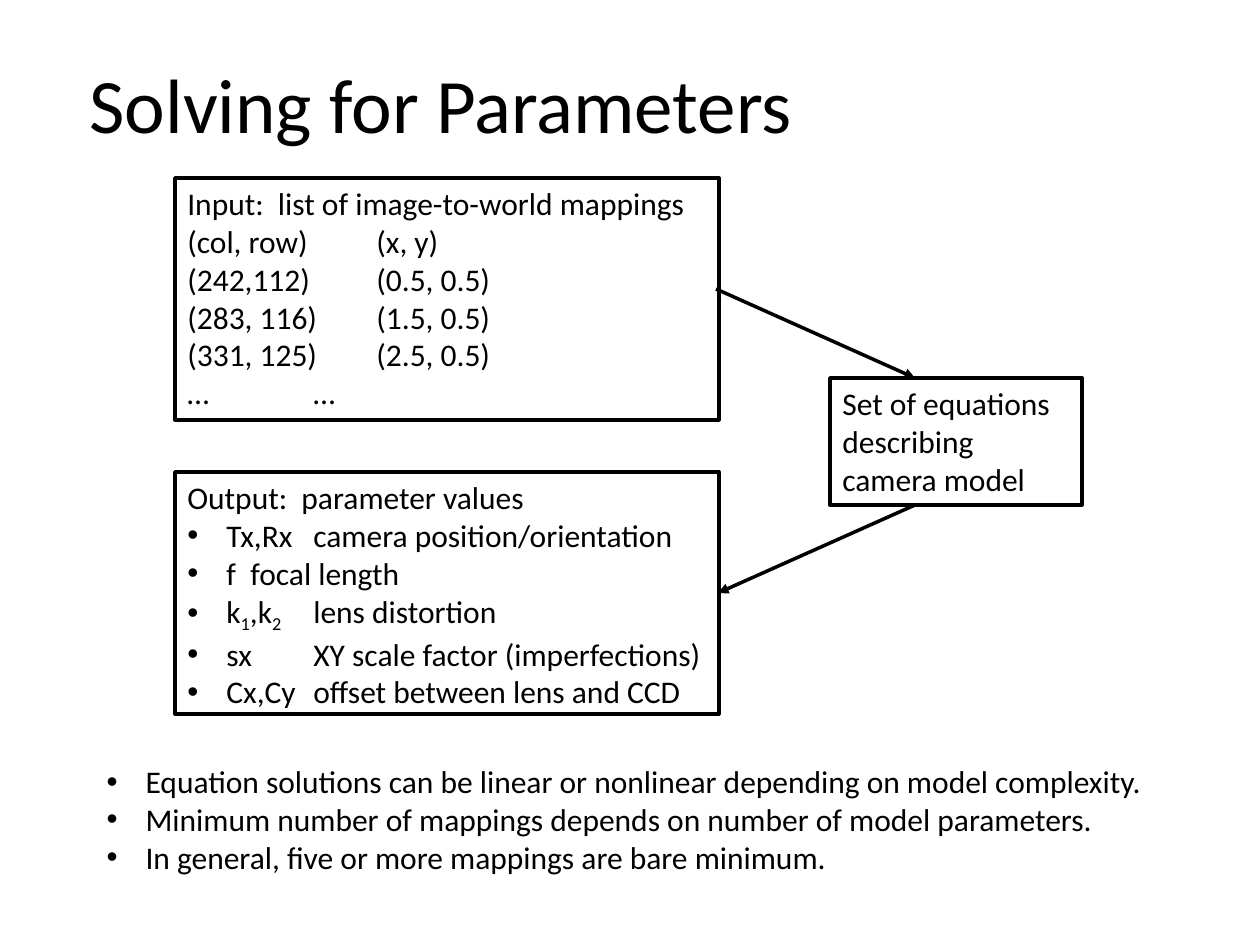
from lxml.etree import SubElement
from pptx import Presentation
from pptx.dml.color import RGBColor
from pptx.enum.shapes import MSO_CONNECTOR as Connector, MSO_SHAPE as Shape
from pptx.enum.text import MSO_ANCHOR as Anchor, MSO_AUTO_SIZE as AutoSize, PP_ALIGN as Align
from pptx.oxml.ns import qn
from pptx.util import Emu, Pt

# Content: a line is a string or a list of (text, is_subscript) runs
TITLE = "Solving for Parameters"
INPUT_LINES = [
    "Input:  list of image-to-world mappings",
    "(col, row)\t\t(x, y)",
    "(242,112) \t(0.5, 0.5)",
    "(283, 116)\t(1.5, 0.5)",
    "(331, 125)\t(2.5, 0.5)",
    "…\t\t…",
]
OUTPUT_HEADING = "Output:  parameter values"
OUTPUT_ITEMS = [
    "Tx,Rx\tcamera position/orientation",
    "f\tfocal length",
    [("k", False), ("1", True), (",k", False), ("2", True), ("\tlens distortion", False)],
    "sx\tXY scale factor (imperfections)",
    "Cx,Cy\toffset between lens and CCD",
]
MODEL_TEXT = "Set of equations describing camera model"
NOTES = [
    "Equation solutions can be linear or nonlinear depending on model complexity.",
    "Minimum number of mappings depends on number of model parameters.",
    "In general, five or more mappings are bare minimum.",
]

# Layout in px: left, top, width, height
TITLE_AREA = (77, 50, 736, 106)
NOTES_AREA = (94, 756, 1075, 127)
INPUT_AREA = (175, 178, 544, 242)
OUTPUT_AREA = (175, 472, 544, 242)
MODEL_AREA = (830, 378, 252, 127)
ARROWS = [((716, 289), (915, 378)), ((915, 505), (718, 593))]
INDENT = 39
FONT, INK = "Calibri", "000000"


def px(value):
    return Emu(round(value * 914400 / 126))


def color(hex_text):
    return RGBColor.from_string(hex_text)


def place(shape, area):
    shape.left, shape.top, shape.width, shape.height = map(px, area)


def add_bullet(paragraph):
    properties = paragraph._p.get_or_add_pPr()
    properties.set("marL", str(px(INDENT)))
    properties.set("indent", str(-px(INDENT)))
    SubElement(properties, qn("a:buFont"), typeface="Arial")
    SubElement(properties, qn("a:buChar"), char="•")


def write(shape, plain=(), bulleted=(), size=18, anchor=Anchor.TOP, wrap=True):
    frame = shape.text_frame
    frame.word_wrap, frame.auto_size, frame.vertical_anchor = wrap, AutoSize.NONE, anchor
    lines = [(line, False) for line in plain] + [(line, True) for line in bulleted]
    for index, (line, has_bullet) in enumerate(lines):
        paragraph = frame.add_paragraph() if index else frame.paragraphs[0]
        paragraph.alignment = Align.LEFT
        paragraph.space_before = Pt(0)
        if has_bullet:
            add_bullet(paragraph)
        for text, is_subscript in [(line, False)] if isinstance(line, str) else line:
            run = paragraph.add_run()
            run.text = text
            run.font.name, run.font.size = FONT, Pt(size)
            run.font.color.rgb = color(INK)
            if is_subscript:
                run._r.get_or_add_rPr().set("baseline", "-25000")


def add_box(slide, area, plain, bulleted=()):
    box = slide.shapes.add_shape(Shape.RECTANGLE, *map(px, area))
    box.shadow.inherit = False
    box.fill.background()
    box.line.color.rgb, box.line.width = color(INK), Pt(2)
    write(box, plain, bulleted)


def add_arrow(slide, start, end):
    arrow = slide.shapes.add_connector(Connector.STRAIGHT, *map(px, start + end))
    arrow.line.color.rgb, arrow.line.width = color(INK), Pt(2)
    SubElement(arrow.line._get_or_add_ln(), qn("a:tailEnd"), type="triangle")
    SubElement(arrow._element.spPr, qn("a:effectLst"))


def main():
    presentation = Presentation()
    presentation.slide_width, presentation.slide_height = px(1260), px(945)
    slide = presentation.slides.add_slide(presentation.slide_layouts[1])

    # Title and closing notes
    title, notes = slide.placeholders
    place(title, TITLE_AREA)
    write(title, [TITLE], size=44, anchor=Anchor.MIDDLE, wrap=False)
    place(notes, NOTES_AREA)
    write(notes, bulleted=NOTES)

    # Flow from input through the model to output
    add_box(slide, OUTPUT_AREA, [OUTPUT_HEADING], OUTPUT_ITEMS)
    add_box(slide, INPUT_AREA, INPUT_LINES)
    add_box(slide, MODEL_AREA, [MODEL_TEXT])
    for start, end in ARROWS:
        add_arrow(slide, start, end)

    presentation.save("out.pptx")


if __name__ == "__main__":
    main()
